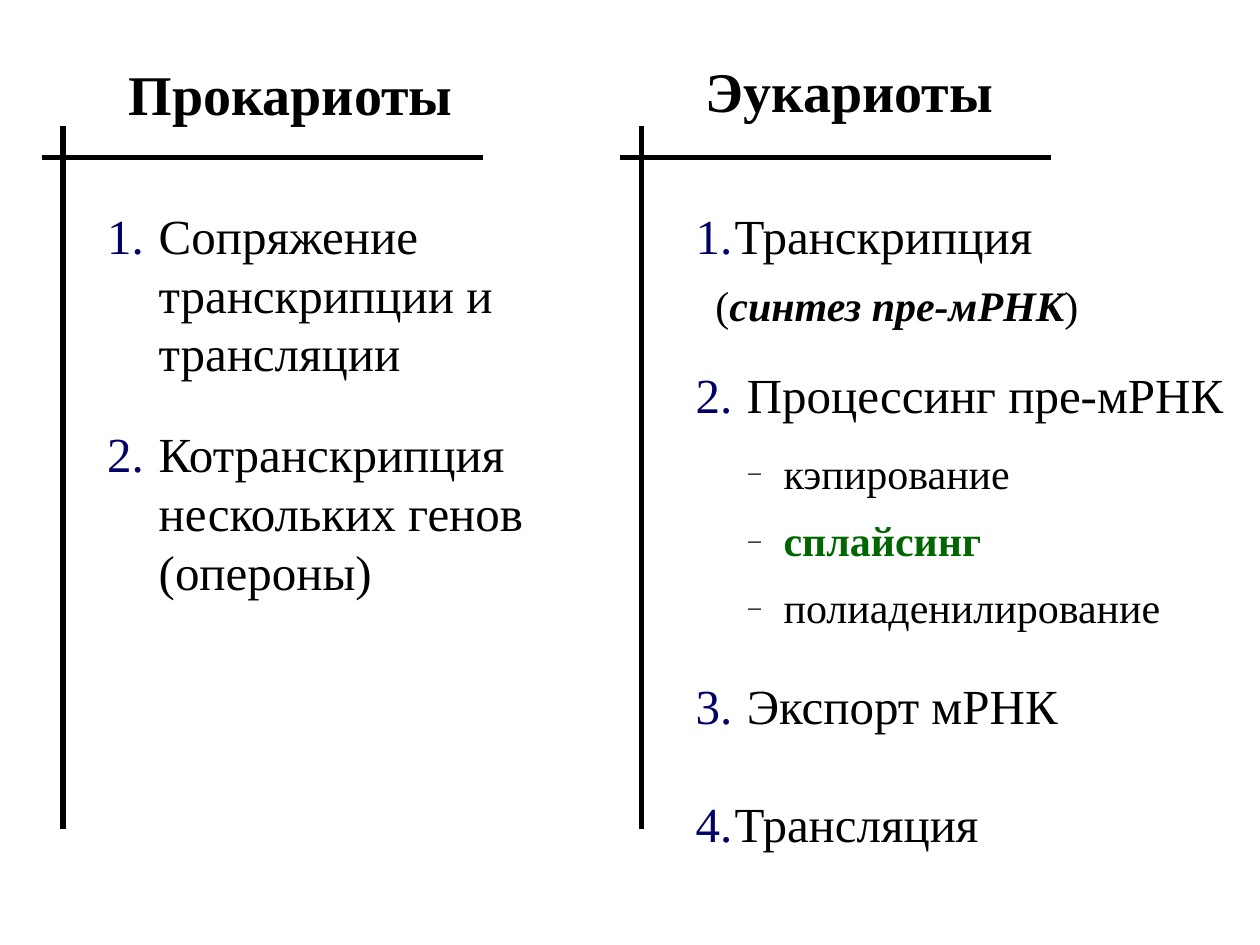
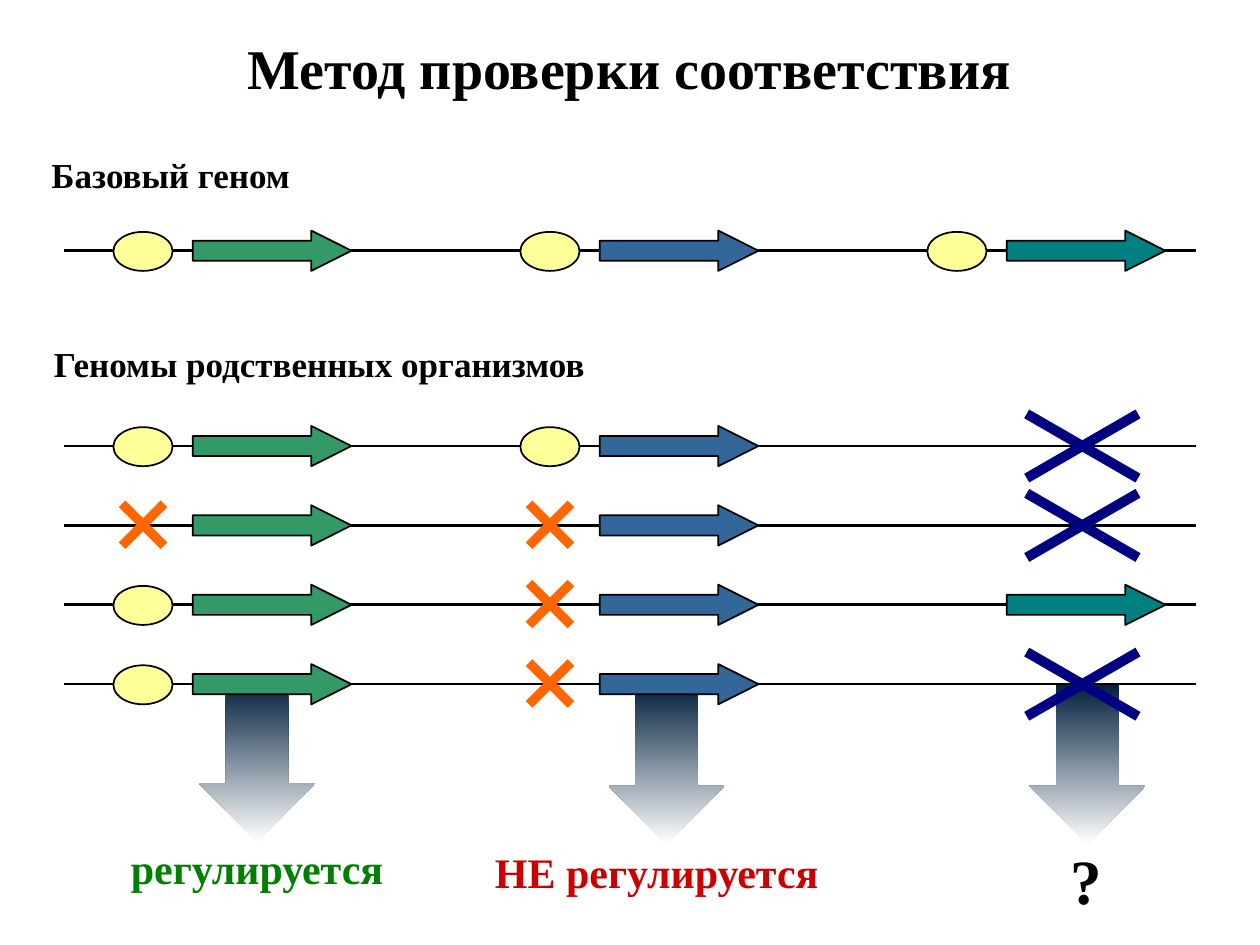
"""Builds two slides on gene expression and the genome consistency check."""
from lxml import etree
from pptx import Presentation
from pptx.dml.color import RGBColor
from pptx.enum.shapes import MSO_CONNECTOR, MSO_SHAPE as SHAPE
from pptx.enum.text import MSO_ANCHOR, MSO_AUTO_SIZE, PP_ALIGN
from pptx.oxml.ns import qn
from pptx.util import Inches, Pt

FONT = "Times New Roman"
COLORS = {
    "text": "000000",
    "number": "000066",
    "accent": "006600",
    "site": "FFFF99",
    "missing_site": "FF6600",
    "missing_gene": "000080",
    "regulated": "008000",
    "unregulated": "CC0000",
    "arrow_top": "001E3C",
    "arrow_bottom": "FFFFFF",
}
GENE_COLORS = ["339966", "336699", "008080"]
FIRST_COLUMN, COLUMN_STEP = 0.9, 3.23
BASE_ROW, FIRST_RELATED_ROW, ROW_STEP = 1.99, 3.54, 0.63
RELATED_GENOMES = [
    ["whole", "whole", "no gene"],
    ["no site", "no site", "no gene"],
    ["whole", "no site", "gene only"],
    ["whole", "no site", "no gene"],
]


def rgb(name):
    return RGBColor.from_string(COLORS.get(name, name))


def place(shape, left, top, width, height):
    shape.left, shape.top = Inches(left), Inches(top)
    shape.width, shape.height = Inches(width), Inches(height)


def prepare_frame(shape, wrap=True):
    frame = shape.text_frame
    frame.word_wrap = wrap
    frame.auto_size = MSO_AUTO_SIZE.NONE
    frame.vertical_anchor = MSO_ANCHOR.TOP
    return frame


def add_run(paragraph, text, size, color="text", bold=False, italic=False):
    run = paragraph.add_run()
    run.text = text
    font = run.font
    font.name, font.size, font.bold, font.italic = FONT, Pt(size), bold, italic
    font.color.rgb = rgb(color)


def add_label(slide, box, text, size, color="text"):
    label = slide.shapes.add_textbox(*map(Inches, box))
    frame = prepare_frame(label, wrap=False)
    add_run(frame.paragraphs[0], text, size, color, bold=True)


def fill_title(placeholder, box, text, align=PP_ALIGN.LEFT, line_spacing=1.0):
    place(placeholder, *box)
    paragraph = prepare_frame(placeholder).paragraphs[0]
    paragraph.alignment = align
    paragraph.line_spacing = line_spacing
    paragraph.space_before = Pt(0)
    add_run(paragraph, text, 32, bold=True)


def set_bullet(paragraph, hang, color, percent, tag, **attributes):
    properties = paragraph._p.get_or_add_pPr()
    properties.set("marL", str(Inches(hang)))
    properties.set("indent", str(-Inches(hang)))
    bullet_color = etree.SubElement(properties, qn("a:buClr"))
    etree.SubElement(bullet_color, qn("a:srgbClr"), val=COLORS[color])
    etree.SubElement(properties, qn("a:buSzPct"), val=str(percent * 1000))
    etree.SubElement(properties, qn("a:buFont"), typeface=FONT)
    etree.SubElement(properties, qn(tag), **attributes)


def add_list_item(frame, index, text, size, gap, color="text", bold=False):
    paragraph = frame.paragraphs[0] if index == 0 else frame.add_paragraph()
    paragraph.line_spacing = Pt(size * 1.2)
    paragraph.space_before = Pt(gap)
    add_run(paragraph, text, size, color, bold)
    return paragraph


def fill_numbered_list(placeholder, box, hang, items):
    place(placeholder, *box)
    frame = prepare_frame(placeholder)
    for index, (text, gap) in enumerate(items):
        paragraph = add_list_item(frame, index, text, 28, gap)
        set_bullet(paragraph, hang, "number", 100, "a:buAutoNum", type="arabicPeriod")


def add_dash_list(slide, box, items):
    frame = prepare_frame(slide.shapes.add_textbox(*map(Inches, box)), wrap=False)
    for index, (text, color, bold) in enumerate(items):
        gap = 9.6 if index else 0
        paragraph = add_list_item(frame, index, text, 24, gap, color, bold)
        set_bullet(paragraph, 0.28, "text", 60, "a:buChar", char="–")


def add_line(slide, start, end, width):
    line = slide.shapes.add_connector(MSO_CONNECTOR.STRAIGHT, *map(Inches, start + end))
    line.line.color.rgb = rgb("text")
    line.line.width = Pt(width)
    etree.SubElement(line._element.spPr, qn("a:effectLst"))


def add_figure(slide, kind, box, color, outlined=False, rotation=0, adjustments=()):
    shape = slide.shapes.add_shape(kind, *map(Inches, box))
    shape.shadow.inherit = False
    shape.rotation = rotation
    for index, value in enumerate(adjustments):
        shape.adjustments[index] = value
    shape.fill.solid()
    shape.fill.fore_color.rgb = rgb(color)
    if outlined:
        shape.line.color.rgb = rgb("text")
        shape.line.width = Pt(1)
    else:
        shape.line.fill.background()
    return shape


def add_verdict_arrow(slide, left, top):
    arrow = add_figure(slide, SHAPE.DOWN_ARROW, (left, top, 0.92, 1.28), "arrow_top",
                       adjustments=(0.538, 0.502))
    arrow.fill.gradient()
    arrow.fill.gradient_angle = 270
    for stop, color in zip(arrow.fill.gradient_stops, ("arrow_top", "arrow_bottom")):
        stop.color.rgb = rgb(color)


def add_locus(slide, column, row, state):
    left = FIRST_COLUMN + column * COLUMN_STEP
    if state == "no gene":
        for rotation in (60, 120):
            add_figure(slide, SHAPE.RECTANGLE, (left + 1.19, row - 0.51, 0.08, 1.02),
                       "missing_gene", rotation=rotation)
        return
    add_figure(slide, SHAPE.RIGHT_ARROW, (left + 0.63, row - 0.16, 1.26, 0.32),
               GENE_COLORS[column], outlined=True, adjustments=(0.5, 0.996))
    if state == "whole":
        add_figure(slide, SHAPE.OVAL, (left, row - 0.15, 0.47, 0.31), "site", outlined=True)
    elif state == "no site":
        add_figure(slide, SHAPE.CROSS, (left, row - 0.24, 0.47, 0.47), "missing_site",
                   rotation=45, adjustments=(0.422,))


def add_genome(slide, row, states):
    add_line(slide, (0.51, row), (9.49, row), 1.5)
    for column, state in enumerate(states):
        add_locus(slide, column, row, state)


def build_comparison(presentation):
    slide = presentation.slides.add_slide(presentation.slide_layouts[4])
    title, left_heading, left_list, right_heading, right_list = slide.placeholders
    title._element.getparent().remove(title._element)

    fill_title(left_heading, (0.92, 0.42, 3.25, 0.63), "Прокариоты")
    fill_title(right_heading, (5.5, 0.4, 2.5, 0.63), "Эукариоты")
    fill_numbered_list(left_list, (0.75, 1.58, 3.67, 3.24), 0.41, [
        ("Сопряжение транскрипции и трансляции", 0),
        ("Котранскрипция нескольких генов (опероны)", 24),
    ])
    fill_numbered_list(right_list, (5.42, 1.58, 4.5, 5.24), 0.31, [
        ("Транскрипция", 0),
        (" Процессинг пре-мРНК", 57.6),
        (" Экспорт мРНК", 144),
        ("Трансляция", 33.6),
    ])

    note = slide.shapes.add_textbox(*map(Inches, (5.58, 2.17, 4.4, 0.5)))
    paragraph = prepare_frame(note).paragraphs[0]
    add_run(paragraph, "(", 24)
    add_run(paragraph, "синтез пре-мРНК", 24, bold=True, italic=True)
    add_run(paragraph, ")", 24)

    add_dash_list(slide, (5.84, 3.5, 3.49, 1.57), [
        ("кэпирование", "text", False),
        ("сплайсинг", "accent", True),
        ("полиаденилирование", "text", False),
    ])
    for axis, start, end in ((0.5, 0.33, 3.83), (5.09, 4.92, 8.34)):
        add_line(slide, (start, 1.25), (end, 1.25), 3)
        add_line(slide, (axis, 1), (axis, 6.58), 3)


def build_consistency_check(presentation):
    slide = presentation.slides.add_slide(presentation.slide_layouts[5])
    fill_title(slide.shapes.title, (0.27, 0.28, 9.45, 0.64),
               "Метод проверки соответствия", PP_ALIGN.CENTER, 0.9)
    for left, top in ((1.58, 5.4), (4.83, 5.42), (8.17, 5.42)):
        add_verdict_arrow(slide, left, top)

    add_label(slide, (0.31, 1.17, 2.11, 0.43), "Базовый геном", 20)
    add_genome(slide, BASE_ROW, ["whole"] * 3)
    add_label(slide, (0.33, 2.67, 4.45, 0.43), "Геномы родственных организмов", 20)
    for index, states in enumerate(RELATED_GENOMES):
        add_genome(slide, FIRST_RELATED_ROW + index * ROW_STEP, states)

    add_label(slide, (0.94, 6.64, 2.22, 0.5), "регулируется", 24, "regulated")
    add_label(slide, (3.83, 6.67, 2.79, 0.5), "НЕ регулируется", 24, "unregulated")
    add_label(slide, (8.4, 6.63, 0.45, 0.7), "?", 36)


def main():
    presentation = Presentation()
    presentation.slide_width, presentation.slide_height = Inches(10), Inches(7.5)
    build_comparison(presentation)
    build_consistency_check(presentation)
    presentation.save("out.pptx")


if __name__ == "__main__":
    main()
